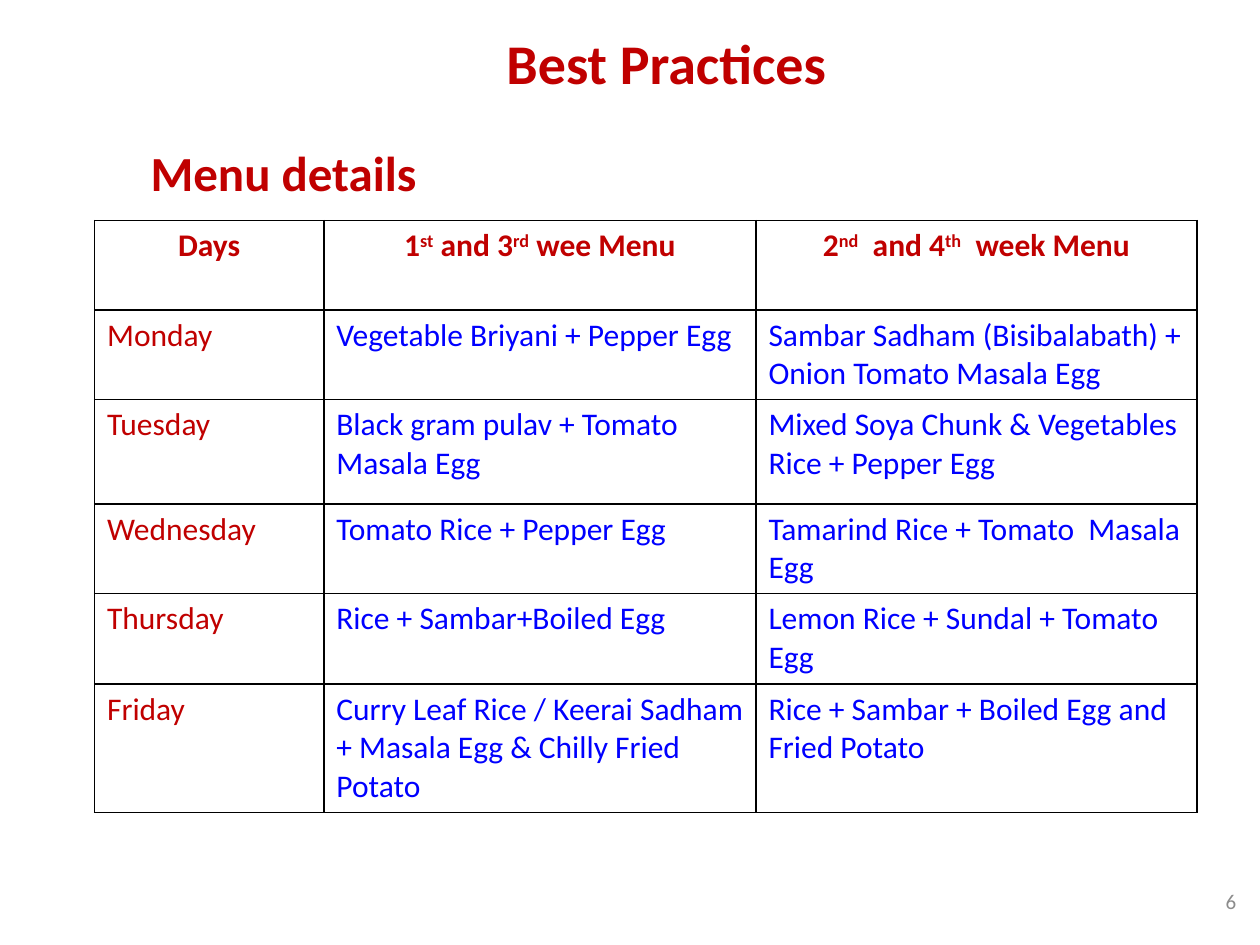
from dataclasses import dataclass

from lxml.etree import SubElement
from pptx import Presentation
from pptx.dml.color import RGBColor as Color
from pptx.enum.text import MSO_ANCHOR as Anchor, MSO_AUTO_SIZE as AutoSize, PP_ALIGN as Align
from pptx.oxml.ns import qn
from pptx.util import Inches, Pt


@dataclass(frozen=True)
class Theme:
    """Colours and type sizes of the slide."""
    font: str = "Calibri"
    heading: str = "C00000"
    dish: str = "0000FF"
    number: str = "8C8C8C"
    border: str = "000000"
    background: str = "FFFFFF"
    title_size: int = 32
    subtitle_size: int = 28
    table_size: int = 18
    number_size: int = 12


THEME = Theme()
WIDTH, HEIGHT = 10, 7.5
COLUMNS = (1.82, 3.43, 3.5)
ROWS = (0.71, 0.71, 0.83, 0.71, 0.72, 1.02)
HEADERS = (
    (("Days", False),),
    (("1", False), ("st", True), (" and 3", False), ("rd", True), (" wee Menu", False)),
    (("2", False), ("nd", True), ("  and 4", False), ("th", True), ("  week Menu", False)),
)
MENU = (
    ("Monday", "Vegetable Briyani + Pepper Egg",
     "Sambar Sadham (Bisibalabath) + Onion Tomato Masala Egg"),
    ("Tuesday", "Black gram pulav + Tomato Masala Egg",
     "Mixed Soya Chunk & Vegetables Rice + Pepper Egg"),
    ("Wednesday", "Tomato Rice + Pepper Egg", "Tamarind Rice + Tomato  Masala Egg"),
    ("Thursday", "Rice + Sambar+Boiled Egg", "Lemon Rice + Sundal + Tomato Egg"),
    ("Friday", "Curry Leaf Rice / Keerai Sadham + Masala Egg & Chilly Fried Potato",
     "Rice + Sambar + Boiled Egg and Fried Potato"),
)


def format_paragraph(paragraph, size, color, bold=False, align=Align.LEFT):
    """Set the font and alignment of a paragraph."""
    paragraph.alignment = align
    font = paragraph.font
    font.name, font.size, font.bold = THEME.font, Pt(size), bold
    font.color.rgb = Color.from_string(color)


def add_title(slide, box, text):
    """Place the title placeholder in the box."""
    title = slide.shapes.title
    title.left, title.top, title.width, title.height = map(Inches, box)
    title.line.color.rgb = Color.from_string(THEME.background)
    title.line.width = Pt(0.75)
    frame = title.text_frame
    frame.text = text
    frame.auto_size, frame.vertical_anchor = AutoSize.NONE, Anchor.MIDDLE
    format_paragraph(frame.paragraphs[0], THEME.title_size, THEME.heading, True, Align.CENTER)


def add_label(slide, box, text, anchor, **style):
    """Place one line of text in the box."""
    frame = slide.shapes.add_textbox(*map(Inches, box)).text_frame
    frame.word_wrap, frame.vertical_anchor = True, anchor
    frame.text = text
    format_paragraph(frame.paragraphs[0], **style)


def style_cell(cell):
    """Clear the fill of a cell and draw its four borders."""
    properties = cell._tc.get_or_add_tcPr()
    for side in ("a:lnL", "a:lnR", "a:lnT", "a:lnB"):
        line = SubElement(properties, qn(side), w=str(Pt(1)))
        fill = SubElement(line, qn("a:solidFill"))
        SubElement(fill, qn("a:srgbClr"), val=THEME.border)
    cell.fill.background()


def add_menu(slide, left, top):
    """Place the menu table with its corner at left and top."""
    box = map(Inches, (left, top, sum(COLUMNS), sum(ROWS)))
    table = slide.shapes.add_table(len(ROWS), len(COLUMNS), *box).table
    table.horz_banding = table.first_row = False
    for column, width in zip(table.columns, COLUMNS):
        column.width = Inches(width)
    for row, height in zip(table.rows, ROWS):
        row.height = Inches(height)
    for cell in table.iter_cells():
        style_cell(cell)
    for index, parts in enumerate(HEADERS):
        paragraph = table.cell(0, index).text_frame.paragraphs[0]
        format_paragraph(paragraph, THEME.table_size, THEME.heading, True, Align.CENTER)
        for text, raised in parts:
            run = paragraph.add_run()
            run.text = text
            if raised:
                run._r.get_or_add_rPr().set("baseline", "30000")
    for row_index, entries in enumerate(MENU, 1):
        for index, text in enumerate(entries):
            cell = table.cell(row_index, index)
            cell.text = text
            color = THEME.dish if index else THEME.heading
            format_paragraph(cell.text_frame.paragraphs[0], THEME.table_size, color)


def main():
    """Build and save the slide."""
    presentation = Presentation()
    presentation.slide_width, presentation.slide_height = Inches(WIDTH), Inches(HEIGHT)
    slide = presentation.slides.add_slide(presentation.slide_layouts[5])
    add_title(slide, (2.5, 0.33, 5.58, 0.33), "Best Practices")
    add_label(slide, (7.58, 6.95, 2.33, 0.4), "6", Anchor.MIDDLE,
              size=THEME.number_size, color=THEME.number, align=Align.RIGHT)
    add_menu(slide, 0.75, 1.75)
    add_label(slide, (1, 1.08, 2.5, 0.57), "Menu details", Anchor.TOP,
              size=THEME.subtitle_size, color=THEME.heading, bold=True, align=Align.CENTER)
    presentation.save("out.pptx")


if __name__ == "__main__":
    main()
